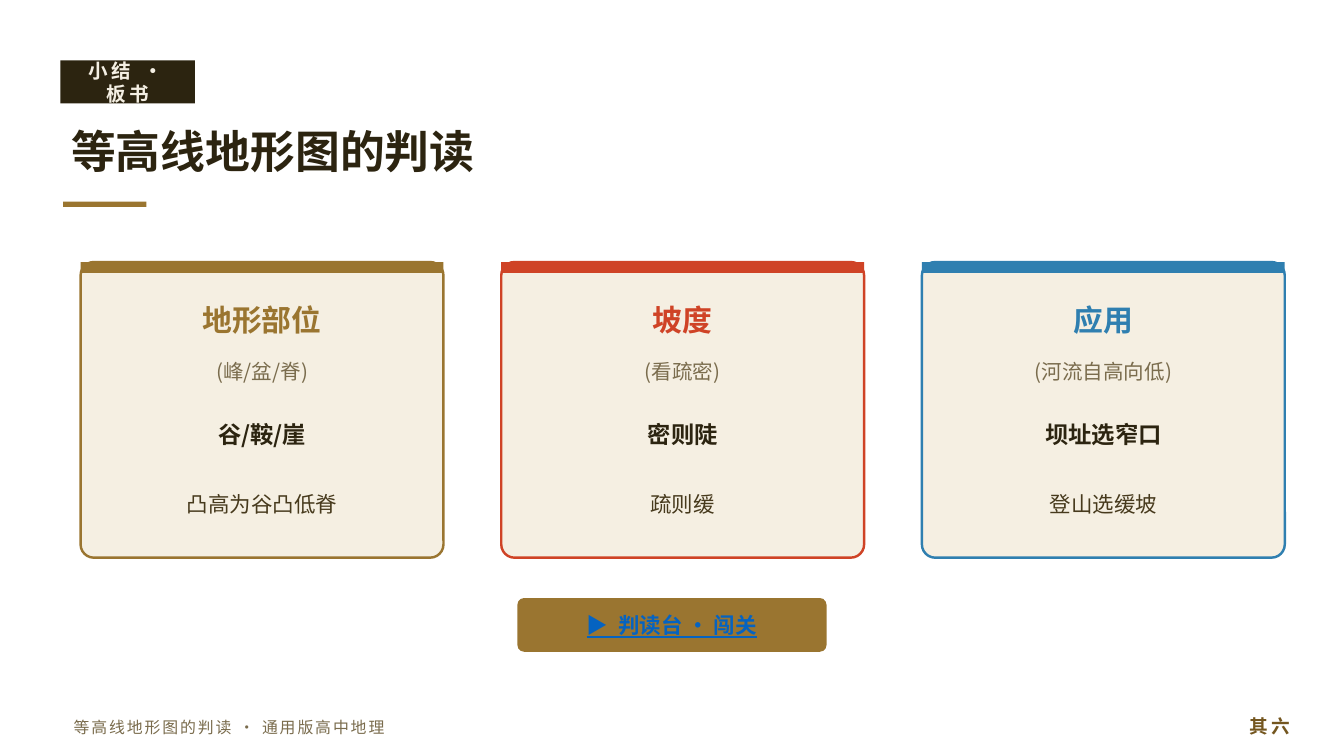
from pptx import Presentation
from pptx.dml.color import RGBColor
from pptx.enum.shapes import MSO_SHAPE
from pptx.enum.text import MSO_ANCHOR, MSO_AUTO_SIZE, PP_ALIGN
from pptx.oxml.ns import qn
from pptx.util import Pt
from lxml import etree

RECT, ROUND = MSO_SHAPE.RECTANGLE, MSO_SHAPE.ROUNDED_RECTANGLE
LEFT, CENTER, RIGHT = PP_ALIGN.LEFT, PP_ALIGN.CENTER, PP_ALIGN.RIGHT
MIDDLE, NO_FIT = MSO_ANCHOR.MIDDLE, MSO_AUTO_SIZE.NONE

# Content
TAG = "小结 · 板书"
TITLE = "等高线地形图的判读"
CARDS = [
    ("ochre", ("地形部位", "(峰/盆/脊)", "谷/鞍/崖", "凸高为谷凸低脊")),
    ("red", ("坡度", "(看疏密)", "密则陡", "疏则缓")),
    ("blue", ("应用", "(河流自高向低)", "坝址选窄口", "登山选缓坡")),
]
BUTTON = "▶  判读台 · 闯关"
FOOTER = "等高线地形图的判读 · 通用版高中地理"
PAGE = "其 六"

# Theme: colours, font and text styles
THEME = {
    "font": "Noto Sans CJK SC",
    "colors": {
        "ink": "2C2410", "cream": "F4EFE3", "card": "F5EFE2", "ochre": "9A7530",
        "red": "CF4326", "blue": "2F7FB0", "muted": "7A6C4D", "body": "473A1D",
        "link": "0563C1", "page": "74561F",
    },
    "styles": {
        "tag": {"size": 10.5, "color": "cream", "bold": True, "spacing": 2},
        "title": {"size": 24, "color": "ink", "bold": True},
        "head": {"size": 16, "bold": True},
        "hint": {"size": 11, "color": "muted"},
        "key": {"size": 12.5, "color": "ink", "bold": True},
        "note": {"size": 11.5, "color": "body"},
        "button": {"size": 11.5, "color": "link", "bold": True, "underline": True},
        "footer": {"size": 8.5, "color": "muted", "spacing": 1},
        "page": {"size": 10, "color": "page", "bold": True},
    },
}

# Card geometry: left, top, width, height, pitch; then style, offset, height of rows
CARD_X, CARD_Y, CARD_W, CARD_H, PITCH = 43.2, 140.4, 194.4, 158.4, 225.36
CARD_ROWS = [("head", 14.4, 32.4), ("hint", 46.8, 23.04),
             ("key", 79.2, 25.92), ("note", 111.6, 36)]


def color(name):
    return RGBColor.from_string(THEME["colors"][name])


def add_block(slide, kind, box, fill, line=None, radius=None):
    sp = slide.shapes.add_shape(kind, *map(Pt, box))
    sp.shadow.inherit = False
    sp.fill.solid()
    sp.fill.fore_color.rgb = color(fill)
    if line:
        sp.line.color.rgb = color(line)
        sp.line.width = Pt(1.3)
    else:
        sp.line.fill.background()
    if radius is not None:
        sp.adjustments[0] = radius
    return sp


def write(sp, text, style, align=CENTER, tint=None):
    fmt = THEME["styles"][style]
    tf = sp.text_frame
    for name, value in {"word_wrap": True, "auto_size": NO_FIT,
                        "vertical_anchor": MIDDLE}.items():
        setattr(tf, name, value)
    p = tf.paragraphs[0]
    p.alignment = align
    r = p.add_run()
    r.text = text
    values = {"name": THEME["font"], "size": Pt(fmt["size"]),
              "bold": fmt.get("bold", False), "underline": fmt.get("underline", False)}
    for name, value in values.items():
        setattr(r.font, name, value)
    r.font.color.rgb = color(tint or fmt["color"])
    # East Asian typeface and letter spacing
    rpr = r._r.get_or_add_rPr()
    etree.SubElement(rpr, qn("a:ea")).set("typeface", THEME["font"])
    if "spacing" in fmt:
        rpr.set("spc", str(fmt["spacing"] * 100))


def add_text(slide, box, text, style, align=CENTER, tint=None):
    write(slide.shapes.add_textbox(*map(Pt, box)), text, style, align, tint)


def add_card(slide, x, accent, lines):
    add_block(slide, ROUND, (x, CARD_Y, CARD_W, CARD_H), "card", accent, 0.045)
    add_block(slide, RECT, (x, CARD_Y, CARD_W, 5.76), accent)
    for text, (style, dy, height) in zip(lines, CARD_ROWS):
        tint = accent if style == "head" else None
        add_text(slide, (x, CARD_Y + dy, CARD_W, height), text, style, tint=tint)


def main():
    prs = Presentation()
    prs.slide_width, prs.slide_height = Pt(720), Pt(405)
    s = prs.slides.add_slide(prs.slide_layouts[5])

    # Tag, title and accent rule
    add_block(s, RECT, (32.4, 32.4, 72, 23.04), "ink")
    add_text(s, (32.4, 31.68, 72, 24.48), TAG, "tag")
    title = s.shapes.title
    title.left, title.top, title.width, title.height = map(Pt, (30.96, 59.04, 648, 43.2))
    write(title, TITLE, "title", LEFT)
    add_block(s, RECT, (33.84, 108, 44.64, 2.88), "ochre")

    # Summary cards
    for i, (accent, lines) in enumerate(CARDS):
        add_card(s, CARD_X + i * PITCH, accent, lines)

    # Button
    add_block(s, ROUND, (277.2, 320.4, 165.6, 28.8), "ochre", radius=0.125)
    add_text(s, (277.2, 319.68, 165.6, 30.24), BUTTON, "button")

    # Footer and page mark
    add_text(s, (32.4, 378.72, 475.2, 21.6), FOOTER, "footer", LEFT)
    add_text(s, (655.2, 377.28, 43.2, 23.04), PAGE, "page", RIGHT)

    prs.save("out.pptx")


if __name__ == "__main__":
    main()
